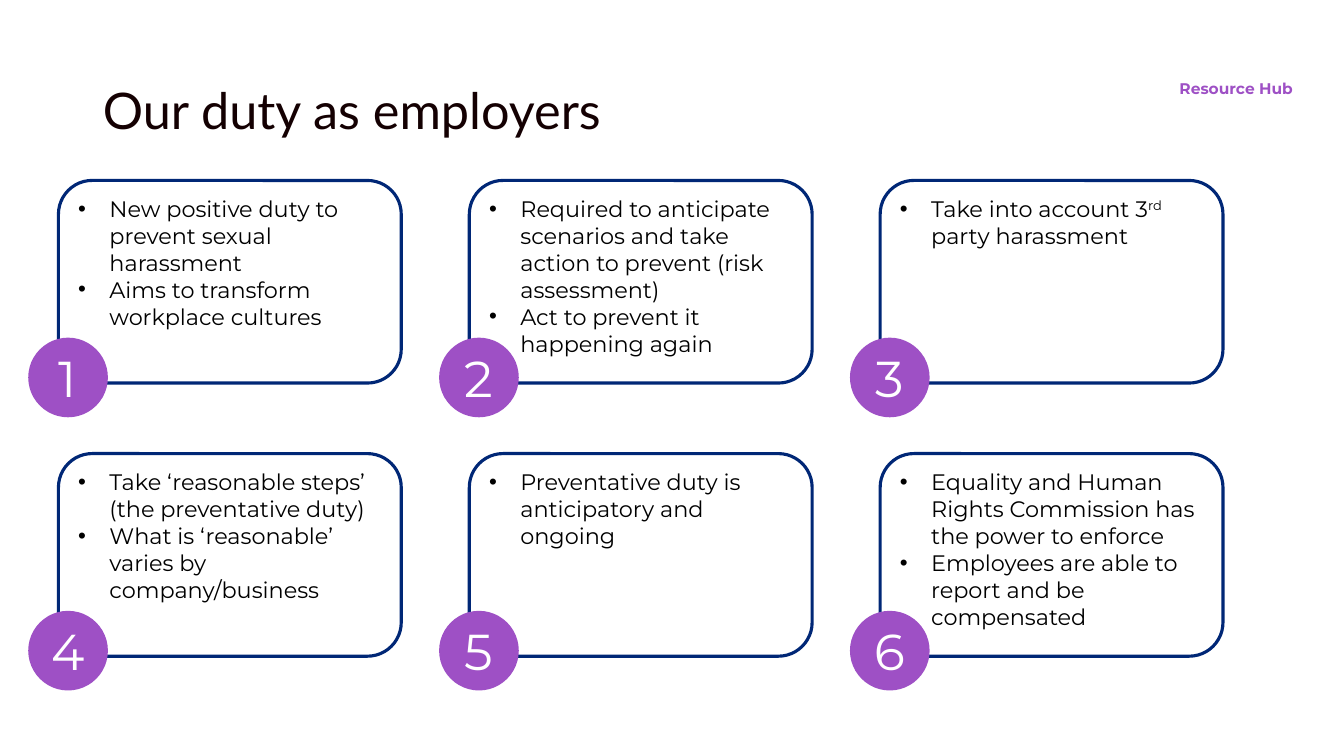
"""Build the slide "Our duty as employers": six numbered cards in a grid."""
from lxml.etree import SubElement
from pptx import Presentation
from pptx.dml.color import RGBColor
from pptx.enum.shapes import MSO_SHAPE
from pptx.enum.text import MSO_ANCHOR, MSO_AUTO_SIZE, PP_ALIGN
from pptx.oxml.ns import qn
from pptx.util import Inches, Pt

NAVY, PURPLE = "002776", "9E50C5"
CARDS = [
    ["New positive duty to prevent sexual harassment",
     "Aims to transform workplace cultures"],
    ["Required to anticipate scenarios and take action to prevent (risk assessment)",
     "Act to prevent it happening again"],
    ["Take into account 3^rd^ party harassment"],
    ["Take ‘reasonable steps’ (the preventative duty)",
     "What is ‘reasonable’ varies by company/business"],
    ["Preventative duty is anticipatory and ongoing"],
    ["Equality and Human Rights Commission has the power to enforce",
     "Employees are able to report and be compensated"],
]


def rgb(color):
    return RGBColor.from_string(color)


def style(r, size, color, name="Montserrat", bold=False):
    r.font.size = Pt(size)
    r.font.name = name
    r.font.bold = bold
    r.font.color.rgb = rgb(color)


prs = Presentation()
prs.slide_width, prs.slide_height = Inches(13.33), Inches(7.5)
s = prs.slides.add_slide(prs.slide_layouts[5])

title = s.shapes.title
title.left, title.top = Inches(0.92), Inches(0.4)
title.width, title.height = Inches(11.5), Inches(1.45)
tf = title.text_frame
tf.text = "Our duty as employers"
tf.auto_size = MSO_AUTO_SIZE.NONE
tf.vertical_anchor = MSO_ANCHOR.MIDDLE
p = tf.paragraphs[0]
p.alignment = PP_ALIGN.LEFT
p.line_spacing = 0.9
style(p.runs[0], 36, "140002", "Lato")

hub = s.shapes.add_textbox(Inches(11.6), Inches(0.74), Inches(1.34), Inches(0.29))
tf = hub.text_frame
tf.text = "Resource Hub"
tf.word_wrap = False
tf.auto_size = MSO_AUTO_SIZE.SHAPE_TO_FIT_TEXT
style(tf.paragraphs[0].runs[0], 11, PURPLE, bold=True)

for i, bullets in enumerate(CARDS):
    row, col = divmod(i, 3)
    x, y = 0.58 + col * 4.075, 1.79 + row * 2.71

    card = s.shapes.add_shape(MSO_SHAPE.ROUNDED_RECTANGLE, Inches(x), Inches(y),
                              Inches(3.4), Inches(2.01))
    card.shadow.inherit = False
    card.fill.background()
    card.line.color.rgb = rgb(NAVY)
    card.line.width = Pt(2.25)
    tf = card.text_frame
    tf.word_wrap = True
    tf.vertical_anchor = MSO_ANCHOR.TOP
    for j, bullet in enumerate(bullets):
        p = tf.add_paragraph() if j else tf.paragraphs[0]
        p.alignment = PP_ALIGN.LEFT
        pPr = p._p.get_or_add_pPr()
        pPr.set("marL", str(Inches(0.31)))
        pPr.set("indent", str(Inches(-0.31)))
        SubElement(pPr, qn("a:buFont")).set("typeface", "Arial")
        SubElement(pPr, qn("a:buChar")).set("char", "•")
        for k, part in enumerate(bullet.split("^")):
            r = p.add_run()
            r.text = part
            style(r, 16, "000000")
            if k % 2:
                r._r.get_or_add_rPr().set("baseline", "30000")

    badge = s.shapes.add_shape(MSO_SHAPE.OVAL, Inches(x - 0.3), Inches(y + 1.56),
                               Inches(0.79), Inches(0.79))
    badge.shadow.inherit = False
    badge.fill.solid()
    badge.fill.fore_color.rgb = rgb(PURPLE)
    badge.line.fill.background()
    tf = badge.text_frame
    tf.text = str(i + 1)
    tf.vertical_anchor = MSO_ANCHOR.MIDDLE
    p = tf.paragraphs[0]
    p.alignment = PP_ALIGN.CENTER
    style(p.runs[0], 36, "FFFFFF")

prs.save("out.pptx")
